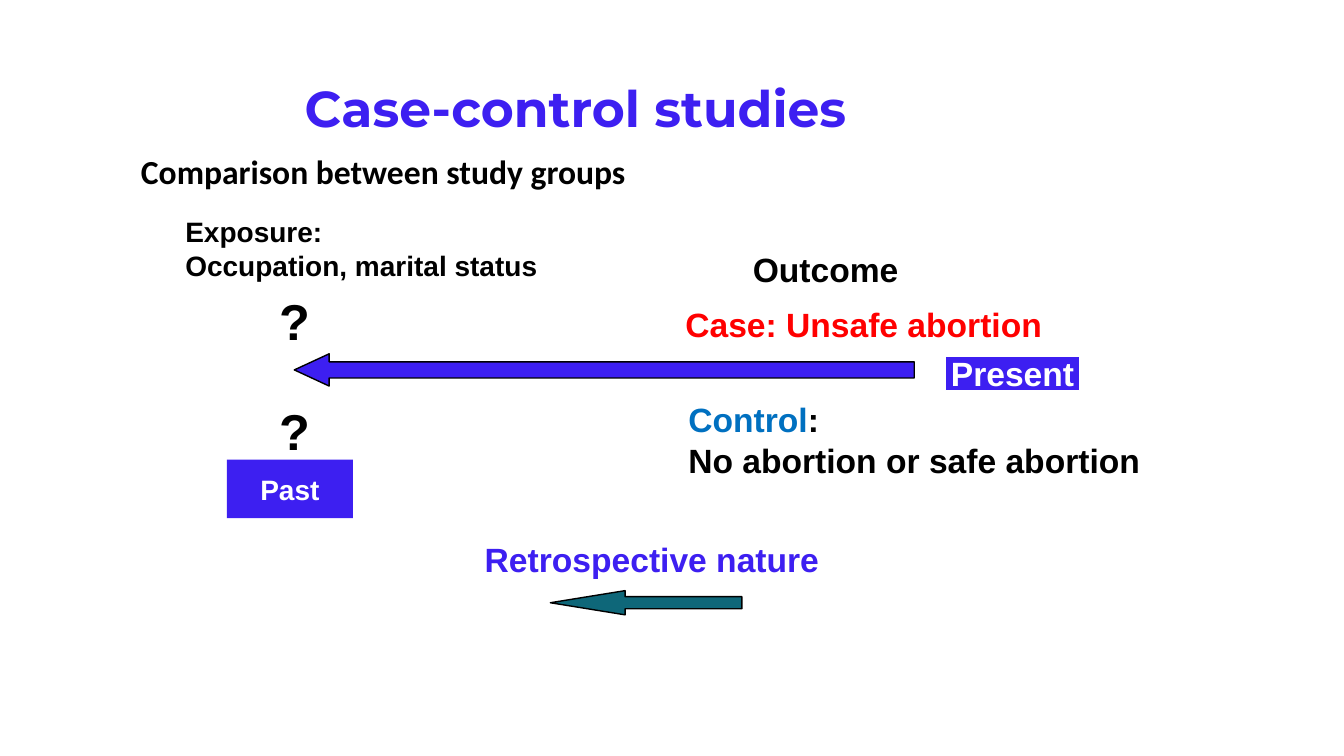
"""Build the case-control studies slide."""
from dataclasses import dataclass

from pptx import Presentation
from pptx.dml.color import RGBColor
from pptx.enum.shapes import MSO_SHAPE
from pptx.enum.text import MSO_ANCHOR, MSO_AUTO_SIZE, PP_ALIGN
from pptx.util import Inches, Pt


@dataclass(frozen=True)
class Theme:
    """Hold the colours, fonts and type sizes of the slide."""
    violet: str = "3D1FF1"
    teal: str = "0E6779"
    red: str = "FF0000"
    blue: str = "0070C0"
    black: str = "000000"
    white: str = "FFFFFF"
    body_font: str = "Arial"
    title_font: str = "Montserrat"
    subtitle_font: str = "Calibri"
    large: int = 36
    medium: int = 24
    small: int = 20


THEME = Theme()
WIDTH, HEIGHT = Inches(13.333), Inches(7.5)


def place(left, top, width, height):
    """Turn percentages of the slide into a position and a size."""
    return (round(WIDTH * left / 100), round(HEIGHT * top / 100),
            round(WIDTH * width / 100), round(HEIGHT * height / 100))


def write(frame, text, *, size=THEME.medium, font=THEME.body_font,
          color=THEME.black, align=PP_ALIGN.LEFT, wrap=False, lead=None):
    """Fill a frame with bold lines, the first after an optional coloured lead."""
    frame.word_wrap = wrap
    for index, line in enumerate(text.split("\n")):
        paragraph = frame.paragraphs[0] if index == 0 else frame.add_paragraph()
        paragraph.alignment = align
        pieces = [(line, color)]
        if lead and index == 0:
            pieces.insert(0, lead)
        for piece, piece_color in pieces:
            run = paragraph.add_run()
            run.text = piece
            run.font.name = font
            run.font.size = Pt(size)
            run.font.bold = True
            run.font.color.rgb = RGBColor.from_string(piece_color)


def add_label(slide, box, text, **style):
    """Add a text box that grows with its text."""
    frame = slide.shapes.add_textbox(*place(*box)).text_frame
    write(frame, text, **style)
    frame.auto_size = MSO_AUTO_SIZE.SHAPE_TO_FIT_TEXT


def add_block(slide, kind, box, fill, *, line=None, line_width=1):
    """Add a filled preset shape with an optional outline."""
    shape = slide.shapes.add_shape(kind, *place(*box))
    shape.shadow.inherit = False
    shape.fill.solid()
    shape.fill.fore_color.rgb = RGBColor.from_string(fill)
    if line:
        shape.line.color.rgb = RGBColor.from_string(line)
        shape.line.width = Pt(line_width)
    else:
        shape.line.fill.background()
    return shape


def add_back_arrow(slide, box, fill, head):
    """Add an arrow that points back in time."""
    arrow = add_block(slide, MSO_SHAPE.LEFT_ARROW, box, fill, line=THEME.black)
    arrow.adjustments[0] = 0.5
    arrow.adjustments[1] = head


def add_time_tag(slide, box, text, *, size, line=None):
    """Add a violet tag naming a point in time."""
    tag = add_block(slide, MSO_SHAPE.RECTANGLE, box, THEME.violet,
                    line=line, line_width=0.75)
    write(tag.text_frame, text, size=size, color=THEME.white,
          align=PP_ALIGN.CENTER)
    tag.text_frame.vertical_anchor = MSO_ANCHOR.MIDDLE


def main():
    """Compose and save the slide."""
    presentation = Presentation()
    presentation.slide_width, presentation.slide_height = WIDTH, HEIGHT
    slide = presentation.slides.add_slide(presentation.slide_layouts[6])

    add_label(slide, (16.88, 9.6, 51.9, 9.33), "Case-control studies",
              size=THEME.large, font=THEME.title_font, color=THEME.violet,
              align=PP_ALIGN.CENTER, wrap=True)
    add_label(slide, (9.75, 19.33, 37.95, 6.67),
              "Comparison between study groups", font=THEME.subtitle_font)

    add_label(slide, (13.05, 27.73, 27.9, 10.27),
              "Exposure:\nOccupation, marital status", size=THEME.small)
    for top in (37.73, 52.27):
        add_label(slide, (20.03, top, 3.9, 9.33), "?", size=THEME.large)
    add_time_tag(slide, (16.88, 60.8, 9.38, 7.73), "Past", size=THEME.small)

    add_label(slide, (55.28, 32.27, 12.45, 6.67), "Outcome")
    add_label(slide, (50.25, 39.6, 28.8, 6.67), "Case: Unsafe abortion",
              color=THEME.red, wrap=True)
    add_label(slide, (50.48, 52.13, 35.4, 12.13),
              ":\nNo abortion or safe abortion", lead=("Control", THEME.blue))
    add_time_tag(slide, (70.35, 47.2, 9.98, 4.4), "Present",
                 size=THEME.medium, line=THEME.white)

    add_back_arrow(slide, (21.9, 46.8, 46.13, 4.27), THEME.violet, 1.08)
    add_label(slide, (35.33, 70.67, 26.93, 6.67), "Retrospective nature",
              color=THEME.violet)
    add_back_arrow(slide, (40.95, 78.13, 14.25, 3.2), THEME.teal, 3.09)

    presentation.save("out.pptx")


if __name__ == "__main__":
    main()
